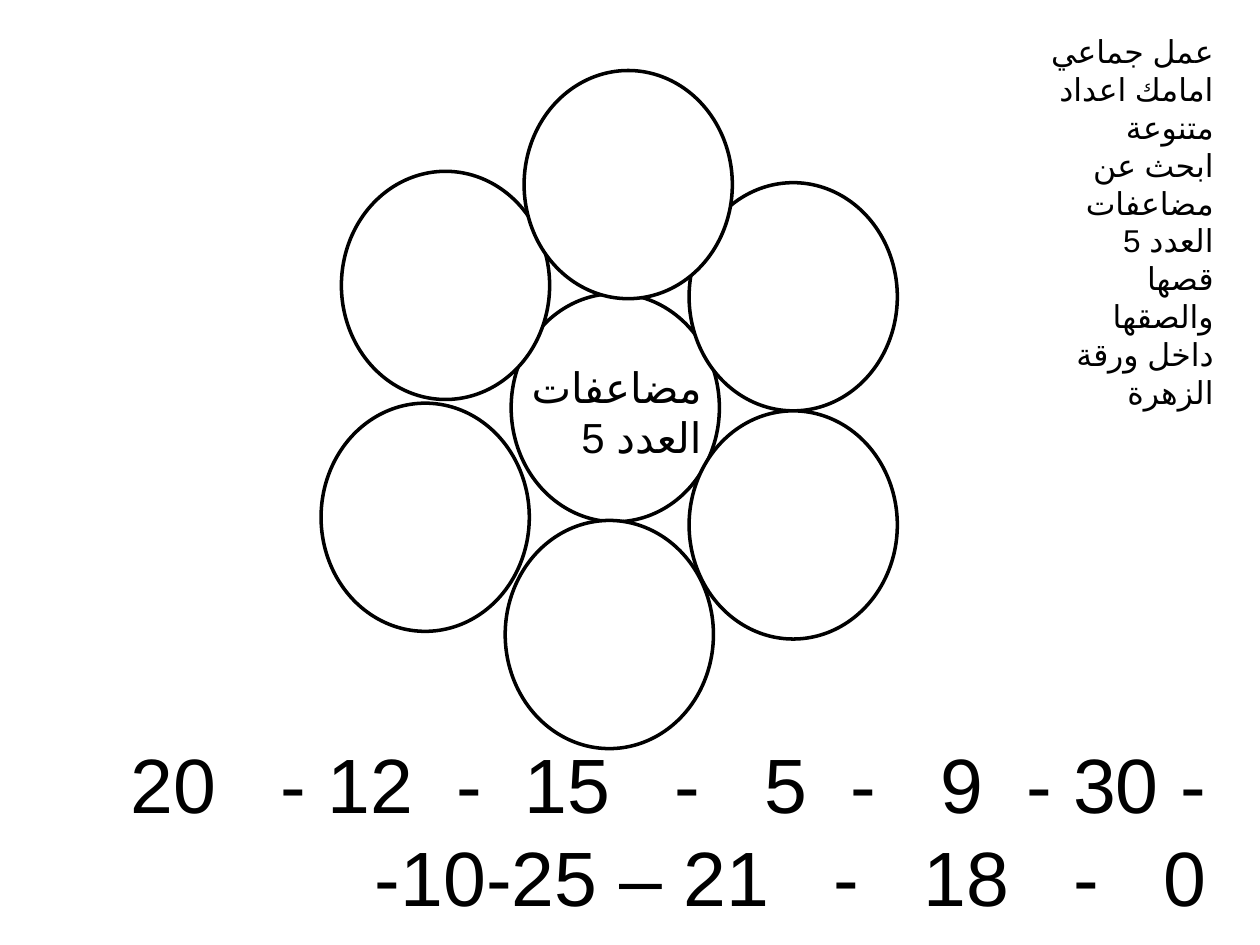
from lxml.etree import SubElement
from pptx import Presentation
from pptx.dml.color import RGBColor
from pptx.enum.lang import MSO_LANGUAGE_ID
from pptx.enum.shapes import MSO_SHAPE
from pptx.enum.text import MSO_AUTO_SIZE, PP_ALIGN
from pptx.oxml.ns import qn
from pptx.util import Pt

FONT, ARABIC_FONT = "Calibri", "Arial"
BLACK, WHITE = "000000", "FFFFFF"
CIRCLE_WIDTH, CIRCLE_HEIGHT = 119, 130.4

# Left and top of each circle, back to front: the heart, then the petals clockwise
FLOWER_CIRCLES = [
    (292.1, 167.8),
    (393.8, 104.4),
    (393.8, 234.8),
    (288.7, 297.4),
    (183.5, 230.4),
    (195.1, 97.9),
    (299.5, 40.3),
]


def color(hex_code):
    return RGBColor.from_string(hex_code)


def add_circle(slide, left, top):
    circle = slide.shapes.add_shape(
        MSO_SHAPE.OVAL, Pt(left), Pt(top), Pt(CIRCLE_WIDTH), Pt(CIRCLE_HEIGHT))
    circle.shadow.inherit = False
    circle.fill.solid()
    circle.fill.fore_color.rgb = color(WHITE)
    circle.line.color.rgb = color(BLACK)
    circle.line.width = Pt(2)


def add_arabic_text(slide, left, top, width, height, size, lines):
    frame = slide.shapes.add_textbox(
        Pt(left), Pt(top), Pt(width), Pt(height)).text_frame
    frame.word_wrap = True
    frame.auto_size = MSO_AUTO_SIZE.SHAPE_TO_FIT_TEXT
    frame.text = "\n".join(lines)
    for paragraph in frame.paragraphs:
        paragraph.alignment = PP_ALIGN.RIGHT
        properties = paragraph._p.get_or_add_pPr()
        properties.set("rtl", "1")
        paragraph.font.name = FONT
        paragraph.font.size = Pt(size)
        paragraph.font.color.rgb = color(BLACK)
        # Arabic letters take the complex-script font
        SubElement(properties.find(qn("a:defRPr")), qn("a:cs"), typeface=ARABIC_FONT)
        for run in paragraph.runs:
            run.font.language_id = MSO_LANGUAGE_ID.ARABIC


def main():
    presentation = Presentation()
    presentation.slide_width, presentation.slide_height = Pt(720), Pt(540)
    slide = presentation.slides.add_slide(presentation.slide_layouts[6])

    # Flower
    for left, top in FLOWER_CIRCLES:
        add_circle(slide, left, top)
    add_arabic_text(slide, 292.1, 203, 116, 65.4, 24, ["مضاعفات العدد 5"])

    # Group work instructions
    add_arabic_text(slide, 592.6, 15, 108, 160, 18, [
        "عمل جماعي ",
        "امامك اعداد متنوعة ابحث عن مضاعفات العدد 5 قصها  والصقها داخل ورقة الزهرة ",
    ])

    # Numbers to sort
    add_arabic_text(slide, 21.6, 417.6, 674.6, 220.3, 44, [
        "- 30 -  9   -  5   -   15  -  12 -   20",
        "0   -   18   -   21 – 10-25- ",
    ])

    presentation.save("out.pptx")


if __name__ == "__main__":
    main()
